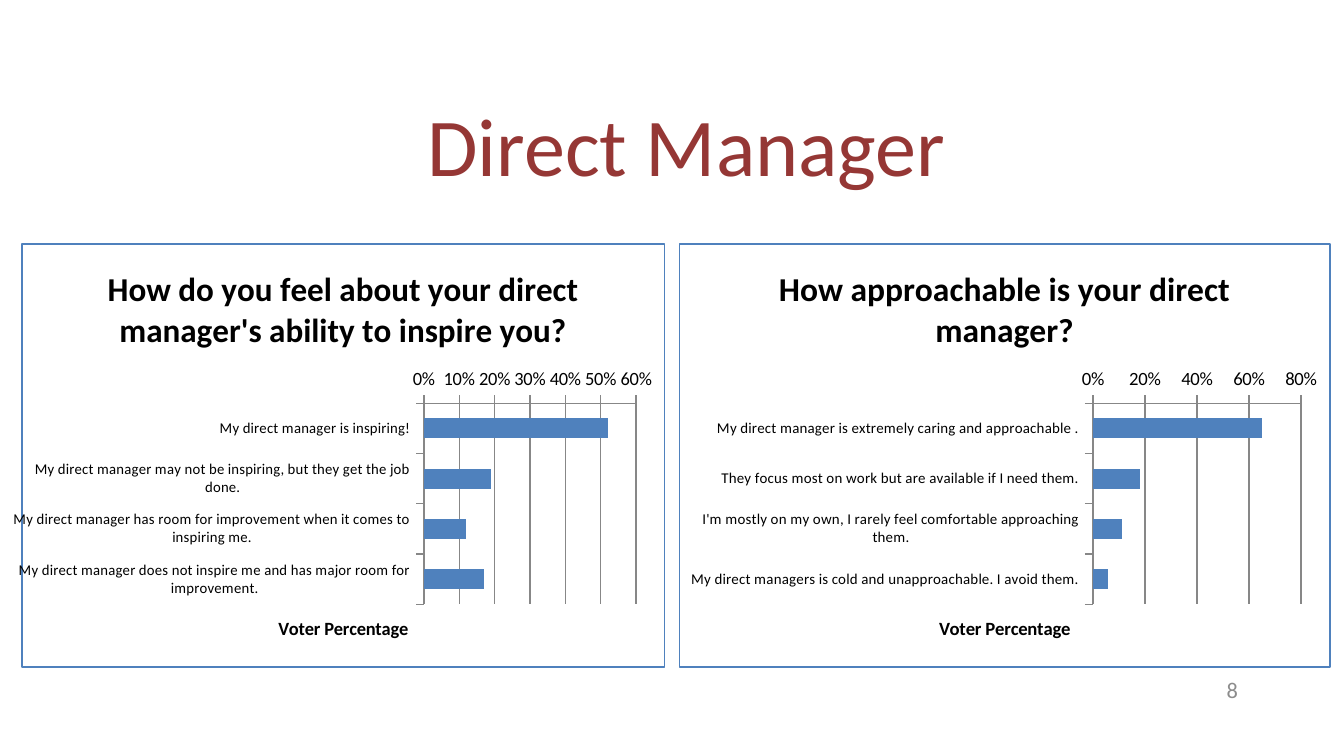
import pptx
import pptx.util
import pptx.chart.data
import pptx.dml.color
import pptx.enum.chart
import pptx.enum.text
import pptx.oxml
import pptx.oxml.ns

RGBColor = pptx.dml.color.RGBColor
Pt = pptx.util.Pt
ALIGN = pptx.enum.text.PP_ALIGN
RED = RGBColor(0x95, 0x37, 0x35)
BLUE = RGBColor(0x4F, 0x81, 0xBD)
BLACK = RGBColor(0, 0, 0)
GRAY = RGBColor(0x8C, 0x8C, 0x8C)
AXIS_GRAY = RGBColor(0x87, 0x87, 0x87)
FONT = "Calibri"
WIDTH = pptx.util.Inches(10)
HEIGHT = WIDTH * 9 // 16
COLS, ROWS = 200, 112.5

CHARTS = [
    ("How do you feel about your direct manager's ability to inspire you?", [
        ("My direct manager is inspiring!", 0.52),
        ("My direct manager may not be inspiring, but they get the job done.", 0.19),
        ("My direct manager has room for improvement when it comes to inspiring me.", 0.12),
        ("My direct manager does not inspire me and has major room for improvement.", 0.17),
    ], 0.6, 0.1),
    ("How approachable is your direct manager?", [
        ("My direct manager is extremely caring and approachable .", 0.65),
        ("They focus most on work but are available if I need them.", 0.18),
        ("I'm mostly on my own, I rarely feel comfortable approaching them.", 0.11),
        ("My direct managers is cold and unapproachable. I avoid them.", 0.06),
    ], 0.8, 0.2),
]


def grid_box(col, row, cols, rows):
    """Turn grid columns and rows into left, top, width and height."""
    return (int(WIDTH * col / COLS), int(HEIGHT * row / ROWS),
            int(WIDTH * cols / COLS), int(HEIGHT * rows / ROWS))


def set_format(obj, formats):
    """Set each attribute of an object from a dict."""
    for name, value in formats.items():
        setattr(obj, name, value)


def set_font(font, size, color, bold=False):
    """Give a font its face, size, weight and colour."""
    set_format(font, {"name": FONT, "size": Pt(size), "bold": bold})
    font.color.rgb = color


def fill_text(sp, text, size, color, align, spacing=None):
    """Write one vertically centred paragraph into a shape."""
    tf = sp.text_frame
    set_format(tf, {"word_wrap": True,
                    "vertical_anchor": pptx.enum.text.MSO_ANCHOR.MIDDLE,
                    "auto_size": pptx.enum.text.MSO_AUTO_SIZE.NONE})
    p = tf.paragraphs[0]
    set_format(p, {"alignment": align, "line_spacing": spacing})
    r = p.add_run()
    r.text = text
    set_font(r.font, size, color)


def add_title(s, box):
    """Place the slide title in its box."""
    sp = s.shapes.title
    set_format(sp, dict(zip(("left", "top", "width", "height"), box)))
    fill_text(sp, "Direct Manager", 44, RED, ALIGN.CENTER, 0.9)


def add_page_number(s, box):
    """Place the page number in its box."""
    fill_text(s.shapes.add_textbox(*box), "8", 12, GRAY, ALIGN.RIGHT)


def set_heading(title, text, size):
    """Write a bold chart or axis title."""
    tf = title.text_frame
    tf.text = text
    set_font(tf.paragraphs[0].runs[0].font, size, BLACK, True)


def add_border(chart, color):
    """Outline the chart area on a white ground."""
    border = pptx.oxml.parse_xml(
        f'<c:spPr {pptx.oxml.ns.nsdecls("c", "a")}>'
        '<a:solidFill><a:srgbClr val="FFFFFF"/></a:solidFill>'
        f'<a:ln w="{Pt(0.75)}"><a:solidFill><a:srgbClr val="{color}"/>'
        '</a:solidFill></a:ln></c:spPr>')
    chart.element.find(pptx.oxml.ns.qn("c:txPr")).addprevious(border)


def add_poll(s, box, question, answers, maximum, step):
    """Place a bar chart of the answers to one question in its box."""
    data = pptx.chart.data.CategoryChartData(number_format="0%")
    data.categories = [label for label, _ in answers]
    data.add_series("Series 1", [value for _, value in answers])
    chart = s.shapes.add_chart(
        pptx.enum.chart.XL_CHART_TYPE.BAR_CLUSTERED, *box, data).chart
    chart.has_legend = False
    set_font(chart.font, 10, BLACK)
    set_heading(chart.chart_title, question, 18)
    add_border(chart, BLUE)

    plot = chart.plots[0]
    set_format(plot, {"gap_width": 150, "vary_by_categories": False})
    fill = plot.series[0].format.fill
    fill.solid()
    fill.fore_color.rgb = BLUE

    cat, val = chart.category_axis, chart.value_axis
    set_format(cat, {"reverse_order": True, "has_major_gridlines": False})
    set_format(val, {"minimum_scale": 0, "maximum_scale": maximum,
                     "major_unit": step, "has_major_gridlines": True})
    set_format(val.tick_labels, {"number_format": "0%",
                                 "number_format_is_linked": False})
    set_heading(val.axis_title, "Voter Percentage", 10)
    for axis, size in ((cat, 8), (val, 10)):
        axis.major_tick_mark = pptx.enum.chart.XL_TICK_MARK.OUTSIDE
        set_font(axis.tick_labels.font, size, BLACK)
    for part in (cat, val, val.major_gridlines):
        part.format.line.color.rgb = AXIS_GRAY


def main():
    """Build the slide and save it."""
    prs = pptx.Presentation()
    set_format(prs, {"slide_width": WIDTH, "slide_height": HEIGHT})
    s = prs.slides.add_slide(prs.slide_layouts[5])
    add_title(s, grid_box(16, 11.4, 172.4, 21.8))
    for i, poll in enumerate(CHARTS):
        add_poll(s, grid_box(2 + 99 * i, 36.2, 97, 63.2), *poll)
    add_page_number(s, grid_box(141.2, 99.6, 45, 6))
    prs.save("out.pptx")


if __name__ == "__main__":
    main()
